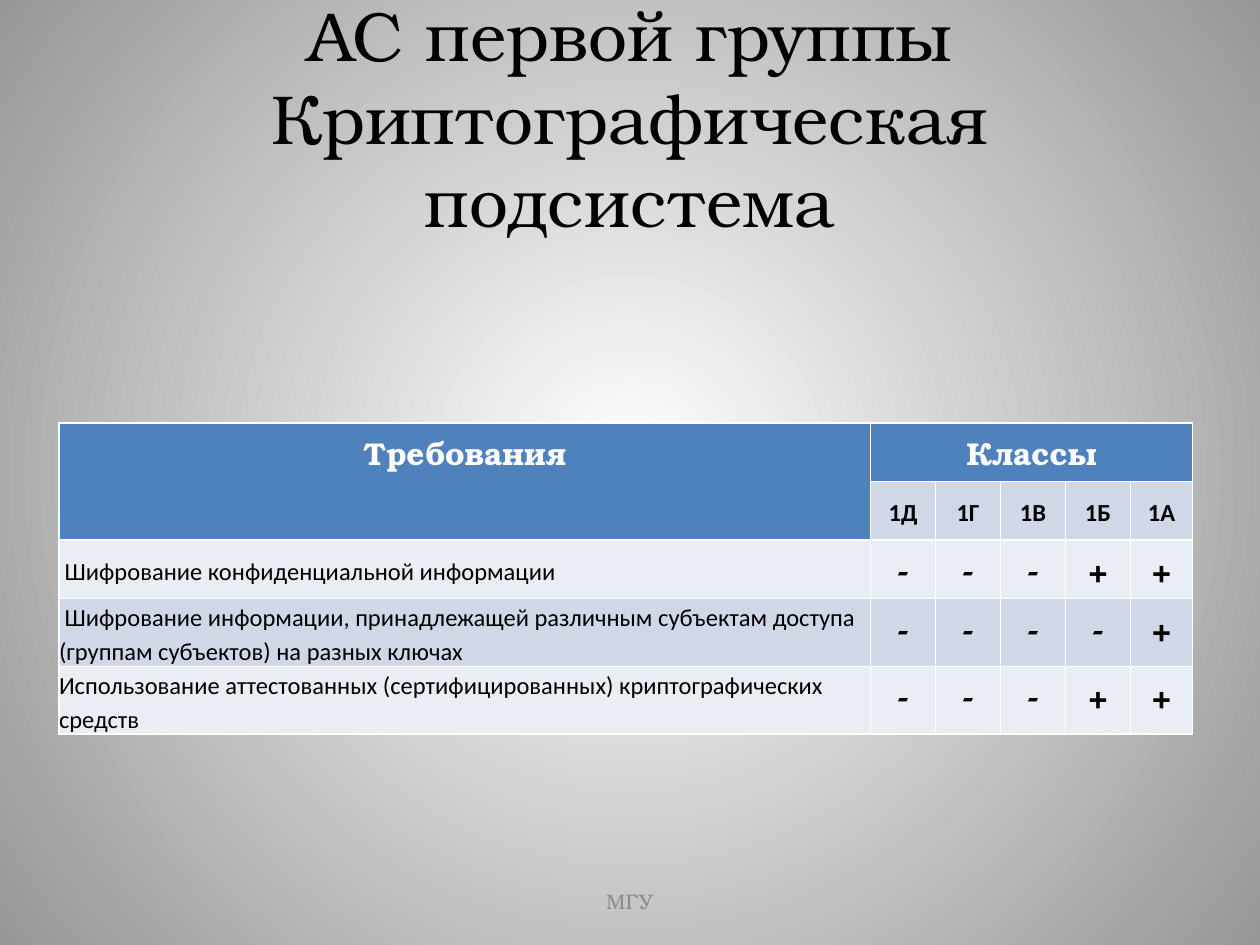
from lxml import etree
from pptx import Presentation
from pptx.dml.color import RGBColor
from pptx.enum.text import MSO_ANCHOR, PP_ALIGN
from pptx.oxml.ns import qn
from pptx.util import Cm, Pt

CENTER, LEFT = PP_ALIGN.CENTER, PP_ALIGN.LEFT
TOP, MIDDLE = MSO_ANCHOR.TOP, MSO_ANCHOR.MIDDLE

BLACK = RGBColor(0x00, 0x00, 0x00)
WHITE = RGBColor(0xFF, 0xFF, 0xFF)
EDGE_GRAY = RGBColor(0x97, 0x97, 0x97)
FOOTER_GRAY = RGBColor(0x8C, 0x8C, 0x8C)
HEADER_BLUE = RGBColor(0x4F, 0x81, 0xBD)
BAND_DARK = RGBColor(0xD0, 0xD8, 0xE8)
BAND_LIGHT = RGBColor(0xE9, 0xED, 0xF4)

SERIF, SANS = "TeX Gyre Bonum", "Calibri"

TITLE = "АС первой группы\vКриптографическая подсистема"
FOOTER = "МГУ"
REQUIREMENTS_HEADING, CLASSES_HEADING = "Требования", "Классы"
CLASSES = ["1Д", "1Г", "1В", "1Б", "1А"]
REQUIREMENTS = [
    (" Шифрование конфиденциальной информации", "---++"),
    (" Шифрование информации, принадлежащей различным субъектам доступа "
     "(группам субъектов) на разных ключах", "----+"),
    ("Использование аттестованных (сертифицированных) криптографических средств", "---++"),
]

TITLE_FONT = {"name": SERIF, "size": Pt(39.6)}
FOOTER_FONT = {"name": SERIF, "size": Pt(12)}
HEADING_FONT = {"name": SERIF, "size": Pt(18), "bold": True}
CLASS_FONT = {"name": SANS, "size": Pt(14), "bold": True}
REQUIREMENT_FONT = {"name": SANS, "size": Pt(14), "bold": False}

COLUMN_WIDTHS = [16.36, 1.31, 1.31, 1.31, 1.31, 1.25]
ROW_HEIGHT = 1.18


def write_text(frame, text, font, color, align=CENTER):
    paragraph = frame.paragraphs[0]
    paragraph.text = text
    paragraph.alignment = align
    for run in paragraph.runs:
        for name, value in font.items():
            setattr(run.font, name, value)
        run.font.color.rgb = color
    return paragraph


def add_label(slide, text, font, color, left, top, width, height):
    box = slide.shapes.add_textbox(Cm(left), Cm(top), Cm(width), Cm(height))
    box.text_frame.word_wrap = True
    box.text_frame.vertical_anchor = MIDDLE
    write_text(box.text_frame, text, font, color)


def set_borders(cell):
    properties = cell._tc.get_or_add_tcPr()
    for index, side in enumerate(("lnL", "lnR", "lnT", "lnB")):
        line = etree.Element(qn(f"a:{side}"), w=str(Pt(1)))
        fill = etree.SubElement(line, qn("a:solidFill"))
        etree.SubElement(fill, qn("a:srgbClr"), val=str(WHITE))
        properties.insert(index, line)


def fill_cell(cell, text, font, color, align=CENTER, tight=False):
    """Write a cell; a tight one has no margins, looser lines and centred height."""
    paragraph = write_text(cell.text_frame, text, font, color, align)
    cell.vertical_anchor = MIDDLE if tight else TOP
    if tight:
        paragraph.line_spacing = 1.15
        for side in ("left", "right", "top", "bottom"):
            setattr(cell, f"margin_{side}", 0)


def paint_background(slide):
    fill = slide.background.fill
    fill.gradient()
    for stop, color in zip(fill.gradient_stops, (WHITE, EDGE_GRAY)):
        stop.color.rgb = color
    gradient = slide.element.find(".//" + qn("a:gradFill"))
    gradient.remove(gradient.find(qn("a:lin")))
    circle = etree.SubElement(gradient, qn("a:path"))
    circle.set("path", "circle")
    etree.SubElement(circle, qn("a:fillToRect"), l="50000", t="50000", r="50000", b="50000")


def add_requirements_table(slide):
    row_count = 2 + len(REQUIREMENTS)
    table = slide.shapes.add_table(
        row_count, len(COLUMN_WIDTHS), Cm(1.19), Cm(8.53),
        Cm(sum(COLUMN_WIDTHS)), Cm(ROW_HEIGHT * row_count)).table
    table.first_row = table.horz_banding = False
    for column, width in zip(table.columns, COLUMN_WIDTHS):
        column.width = Cm(width)

    row_fills = [HEADER_BLUE, BAND_DARK, BAND_LIGHT, BAND_DARK, BAND_LIGHT]
    for row, color in zip(table.rows, row_fills):
        row.height = Cm(ROW_HEIGHT)
        for cell in row.cells:
            cell.fill.solid()
            cell.fill.fore_color.rgb = color
            set_borders(cell)

    table.cell(0, 0).merge(table.cell(1, 0))
    table.cell(0, 1).merge(table.cell(0, len(CLASSES)))
    for column, heading in enumerate((REQUIREMENTS_HEADING, CLASSES_HEADING)):
        fill_cell(table.cell(0, column), heading, HEADING_FONT, WHITE)
    for column, name in enumerate(CLASSES, 1):
        fill_cell(table.cell(1, column), name, CLASS_FONT, BLACK, tight=True)
    for row, (requirement, marks) in enumerate(REQUIREMENTS, 2):
        fill_cell(table.cell(row, 0), requirement, REQUIREMENT_FONT, BLACK, LEFT, tight=True)
        for column, mark in enumerate(marks, 1):
            fill_cell(table.cell(row, column), mark, HEADING_FONT, BLACK)


def main():
    presentation = Presentation()
    presentation.slide_width, presentation.slide_height = Cm(25.4), Cm(19.05)
    slide = presentation.slides.add_slide(presentation.slide_layouts[6])
    paint_background(slide)
    add_label(slide, TITLE, TITLE_FONT, BLACK, 1.27, 0.76, 22.86, 3.18)
    add_requirements_table(slide)
    add_label(slide, FOOTER, FOOTER_FONT, FOOTER_GRAY, 8.68, 17.66, 8.04, 1.01)
    presentation.save("out.pptx")


if __name__ == "__main__":
    main()
